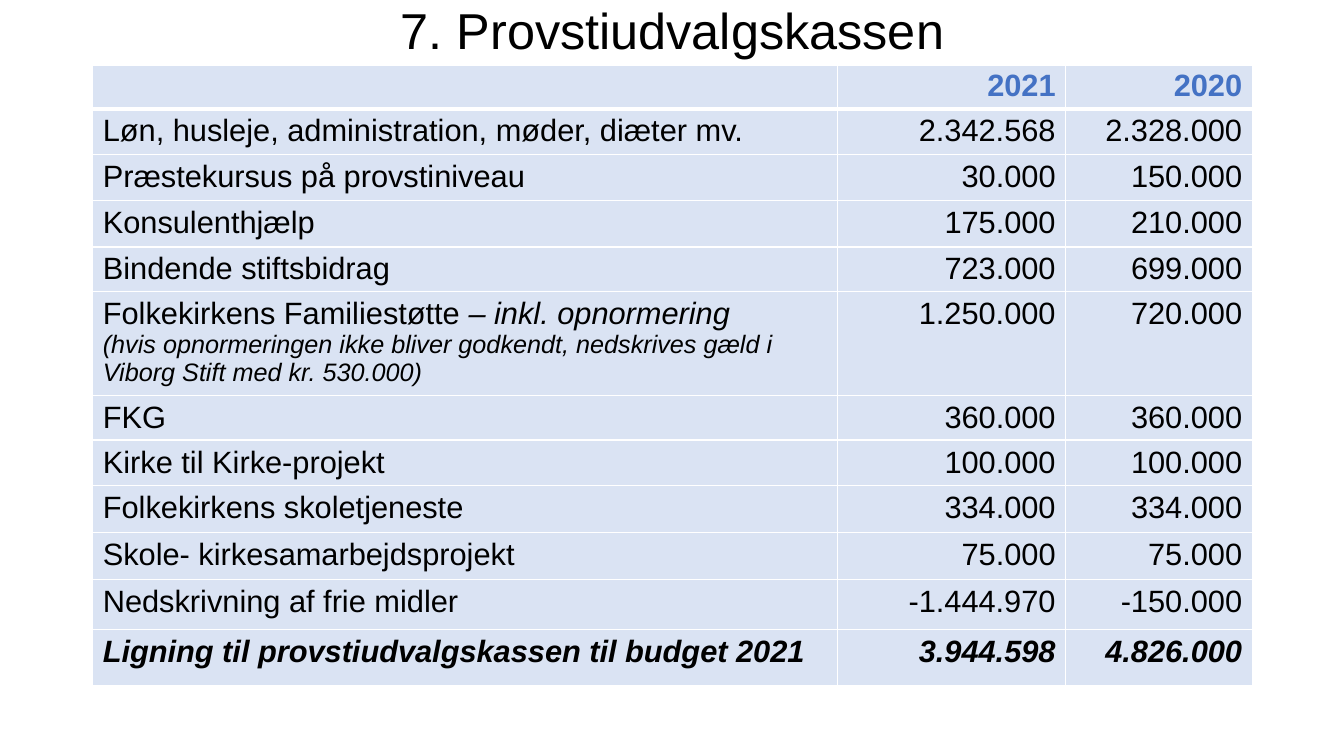
from dataclasses import dataclass

from lxml import etree
from pptx import Presentation
from pptx.dml.color import RGBColor
from pptx.enum.text import MSO_ANCHOR, PP_ALIGN
from pptx.oxml.ns import qn
from pptx.util import Inches, Pt

LEFT, CENTER, RIGHT = PP_ALIGN.LEFT, PP_ALIGN.CENTER, PP_ALIGN.RIGHT
MIDDLE = MSO_ANCHOR.MIDDLE


@dataclass(frozen=True)
class Theme:
    font: str = "Arial"
    text: str = "000000"
    accent: str = "4472C4"
    cell: str = "DAE3F3"
    border: str = "FFFFFF"
    title_size: int = 36
    body_size: int = 22
    note_size: int = 18


THEME = Theme()
TITLE = "7. Provstiudvalgskassen"
FAMILY = "Folkekirkens Familiestøtte "
FAMILY_EXTRA = "– inkl. opnormering"
FAMILY_NOTE = (
    "(hvis opnormeringen ikke bliver godkendt, nedskrives gæld i "
    "Viborg Stift med kr. 530.000)"
)
COLUMN_WIDTHS = (7.39, 2.26, 1.85)
BUDGET = (
    (0.43, "", "2021", "2020"),
    (0.45, "Løn, husleje, administration, møder, diæter mv.", "2.342.568", "2.328.000"),
    (0.46, "Præstekursus på provstiniveau", "30.000", "150.000"),
    (0.46, "Konsulenthjælp", "175.000", "210.000"),
    (0.44, "Bindende stiftsbidrag", "723.000", "699.000"),
    (1.0, FAMILY, "1.250.000", "720.000"),
    (0.44, "FKG", "360.000", "360.000"),
    (0.45, "Kirke til Kirke-projekt", "100.000", "100.000"),
    (0.47, "Folkekirkens skoletjeneste", "334.000", "334.000"),
    (0.46, "Skole- kirkesamarbejdsprojekt", "75.000", "75.000"),
    (0.5, "Nedskrivning af frie midler", "-1.444.970", "-150.000"),
    (0.56, "Ligning til provstiudvalgskassen til budget 2021", "3.944.598", "4.826.000"),
)


def style_paragraph(para, size, color=THEME.text, align=LEFT, bold=False, italic=False):
    para.alignment = align
    font = para.font
    font.name, font.size = THEME.font, Pt(size)
    font.bold, font.italic = bold, italic
    font.color.rgb = RGBColor.from_string(color)


def add_title(page):
    box = page.shapes.add_textbox(Inches(0.92), 0, Inches(11.5), Inches(0.65))
    frame = box.text_frame
    frame.word_wrap = True
    frame.vertical_anchor = MIDDLE
    para = frame.paragraphs[0]
    para.text = TITLE
    para.line_spacing = 0.9
    style_paragraph(para, THEME.title_size, align=CENTER)


def set_borders(cell, bottom_width):
    properties = cell._tc.get_or_add_tcPr()
    widths = {"a:lnL": 1, "a:lnR": 1, "a:lnT": 1, "a:lnB": bottom_width}
    for position, (tag, width) in enumerate(widths.items()):
        line = etree.Element(qn(tag), w=str(Pt(width)))
        fill = etree.SubElement(line, qn("a:solidFill"))
        etree.SubElement(fill, qn("a:srgbClr"), val=THEME.border)
        properties.insert(position, line)


def fill_cell(cell, text, align, header, total):
    cell.margin_bottom = Inches(0.02)
    cell.margin_top = Inches(0.03 if header else 0.05)
    cell.fill.solid()
    cell.fill.fore_color.rgb = RGBColor.from_string(THEME.cell)
    set_borders(cell, 3 if header else 1)
    para = cell.text_frame.paragraphs[0]
    if text:
        para.add_run().text = text
    color = THEME.accent if header else THEME.text
    style_paragraph(para, THEME.body_size, color, align, header or total, total)


def add_family_note(cell):
    frame = cell.text_frame
    span = frame.paragraphs[0].add_run()
    span.text = FAMILY_EXTRA
    span.font.italic = True
    note = frame.add_paragraph()
    note.text = FAMILY_NOTE
    style_paragraph(note, THEME.note_size, italic=True)


def add_budget_table(page):
    height = sum(row[0] for row in BUDGET)
    frame = page.shapes.add_table(
        len(BUDGET), len(COLUMN_WIDTHS),
        Inches(0.92), Inches(0.65), Inches(sum(COLUMN_WIDTHS)), Inches(height),
    )
    table = frame.table
    for column, width in zip(table.columns, COLUMN_WIDTHS):
        column.width = Inches(width)
    last = len(BUDGET) - 1
    for index, (row_height, *texts) in enumerate(BUDGET):
        table.rows[index].height = Inches(row_height)
        for position, text in enumerate(texts):
            cell = table.cell(index, position)
            align = RIGHT if position else LEFT
            fill_cell(cell, text, align, index == 0, index == last)
            if text == FAMILY:
                add_family_note(cell)


def main():
    deck = Presentation()
    deck.slide_width, deck.slide_height = Inches(13.33), Inches(7.5)
    page = deck.slides.add_slide(deck.slide_layouts[6])
    add_title(page)
    add_budget_table(page)
    deck.save("out.pptx")


if __name__ == "__main__":
    main()
